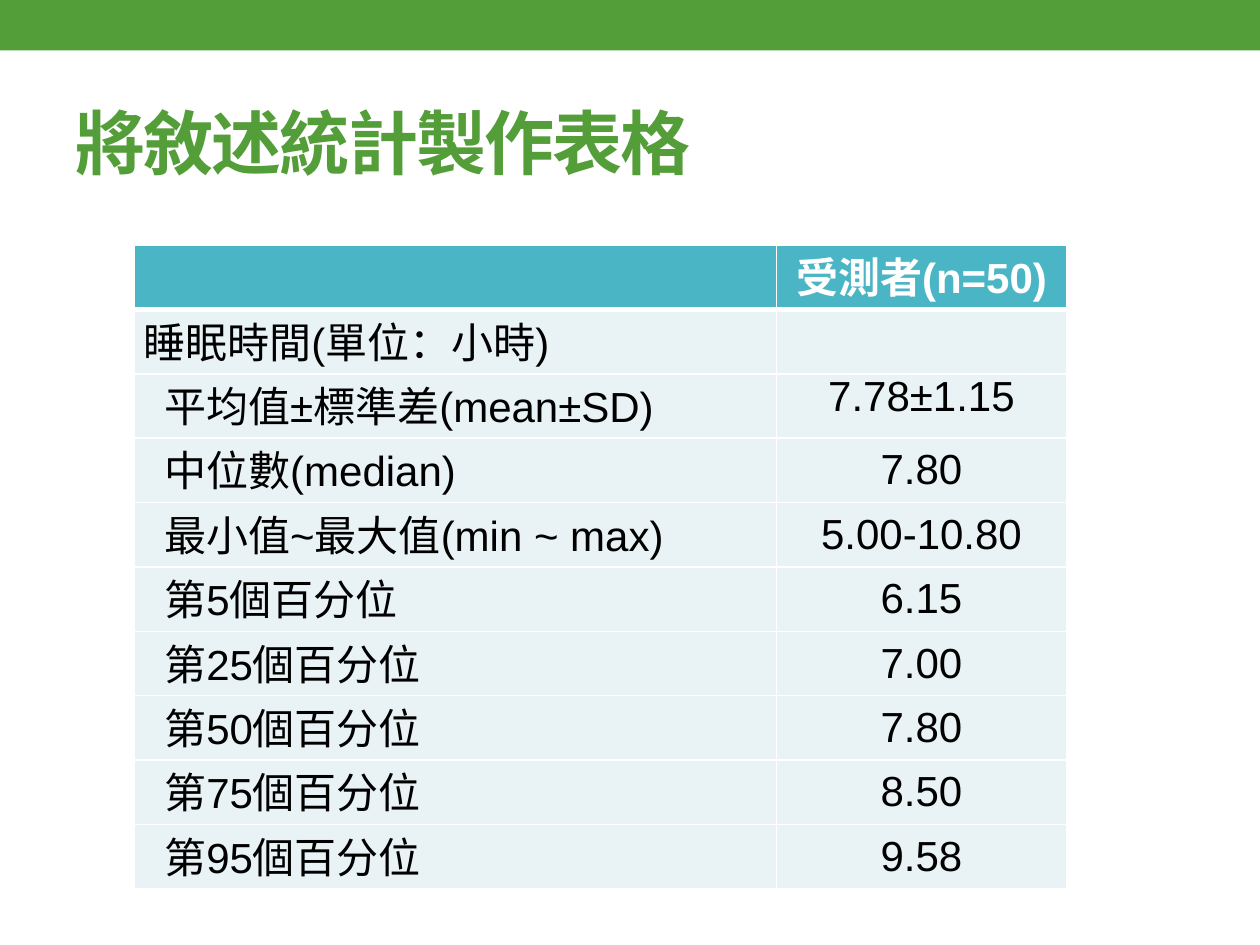
import pptx
import pptx.dml.color
import pptx.enum.shapes
import pptx.enum.text
import pptx.oxml
import pptx.oxml.ns
import pptx.util

Pt = pptx.util.Pt
PP_ALIGN = pptx.enum.text.PP_ALIGN
ANCHOR = pptx.enum.text.MSO_ANCHOR

TITLE = "將敘述統計製作表格"
HEADER = ("", "受測者(n=50)")
GROUP = ("睡眠時間(單位：小時)", "")
MEASURES = [
    ("平均值±標準差(mean±SD)", "7.78±1.15"),
    ("中位數(median)", "7.80"),
    ("最小值~最大值(min ~ max)", "5.00-10.80"),
    ("第5個百分位", "6.15"),
    ("第25個百分位", "7.00"),
    ("第50個百分位", "7.80"),
    ("第75個百分位", "8.50"),
    ("第95個百分位", "9.58"),
]
ROWS = [HEADER, GROUP, *MEASURES]
FIRST_MEASURE = 2

THEME = {
    "font": "Arial", "title_size": 40, "table_size": 24,
    "green": "549E39", "header": "4AB5C4", "body": "E9F3F5",
    "white": "FFFFFF", "black": "000000",
}
SLIDE_WIDTH, SLIDE_HEIGHT = 720, 540
BAND_HEIGHT = 28.8
TITLE_BOX = (36, 41.76, 648, 77.76)
TABLE_LEFT, TABLE_TOP = 76.8, 140
COLUMN_WIDTHS = (367, 165.6)
ROW_HEIGHT = 36.8
CELL_INSET = 5.1
MEASURE_INDENT = 12


def color(key):
    return pptx.dml.color.RGBColor.from_string(THEME[key])


def paint(part, key):
    part.fill.solid()
    part.fill.fore_color.rgb = color(key)


def write(paragraph, text, size, color_key, bold):
    run = paragraph.add_run()
    run.text = text
    run.font.name = THEME["font"]
    run.font.size = Pt(THEME[size])
    run.font.bold = bold
    run.font.color.rgb = color(color_key)
    return run


def set_borders(cell, bottom, top):
    """Rule all four sides in white; must run before the cell is filled."""
    properties = cell._tc.get_or_add_tcPr()
    for side, width in (("L", 1), ("R", 1), ("T", top), ("B", bottom)):
        properties.append(pptx.oxml.parse_xml(
            f'<a:ln{side} {pptx.oxml.ns.nsdecls("a")} w="{Pt(width)}">'
            f'<a:solidFill><a:srgbClr val="{THEME["white"]}"/></a:solidFill>'
            f'</a:ln{side}>'))


def add_band(slide):
    band = slide.shapes.add_shape(pptx.enum.shapes.MSO_SHAPE.RECTANGLE,
                                  0, 0, Pt(SLIDE_WIDTH), Pt(BAND_HEIGHT))
    band.shadow.inherit = False
    paint(band, "green")
    band.line.fill.background()


def add_title(slide):
    frame = slide.shapes.add_textbox(*map(Pt, TITLE_BOX)).text_frame
    frame.word_wrap = True
    frame.vertical_anchor = ANCHOR.MIDDLE
    run = write(frame.paragraphs[0], TITLE, "title_size", "green", True)
    run.font._element.set("spc", "-100")


def fill_cell(cell, text, row, column):
    is_header = row == 0
    set_borders(cell, bottom=3 if is_header else 1, top=3 if row == 1 else 1)
    paint(cell, "header" if is_header else "body")
    cell.margin_left = cell.margin_right = Pt(CELL_INSET)
    cell.margin_top = cell.margin_bottom = 0
    paragraph = cell.text_frame.paragraphs[0]
    if column == 1:
        paragraph.alignment = PP_ALIGN.CENTER
        if row > FIRST_MEASURE:
            cell.vertical_anchor = ANCHOR.MIDDLE
    elif row >= FIRST_MEASURE:
        paragraph._p.get_or_add_pPr().set("indent", str(Pt(MEASURE_INDENT)))
    if text:
        write(paragraph, text, "table_size",
              "white" if is_header else "black", is_header)


def add_statistics(slide):
    table = slide.shapes.add_table(
        len(ROWS), len(COLUMN_WIDTHS), Pt(TABLE_LEFT), Pt(TABLE_TOP),
        Pt(sum(COLUMN_WIDTHS)), Pt(ROW_HEIGHT * len(ROWS))).table
    for column, width in zip(table.columns, COLUMN_WIDTHS):
        column.width = Pt(width)
    for row, texts in enumerate(ROWS):
        table.rows[row].height = Pt(ROW_HEIGHT)
        for column, text in enumerate(texts):
            fill_cell(table.cell(row, column), text, row, column)


def main():
    deck = pptx.Presentation()
    deck.slide_width, deck.slide_height = Pt(SLIDE_WIDTH), Pt(SLIDE_HEIGHT)
    slide = deck.slides.add_slide(deck.slide_layouts[6])
    add_band(slide)
    add_title(slide)
    add_statistics(slide)
    deck.save("out.pptx")


if __name__ == "__main__":
    main()
